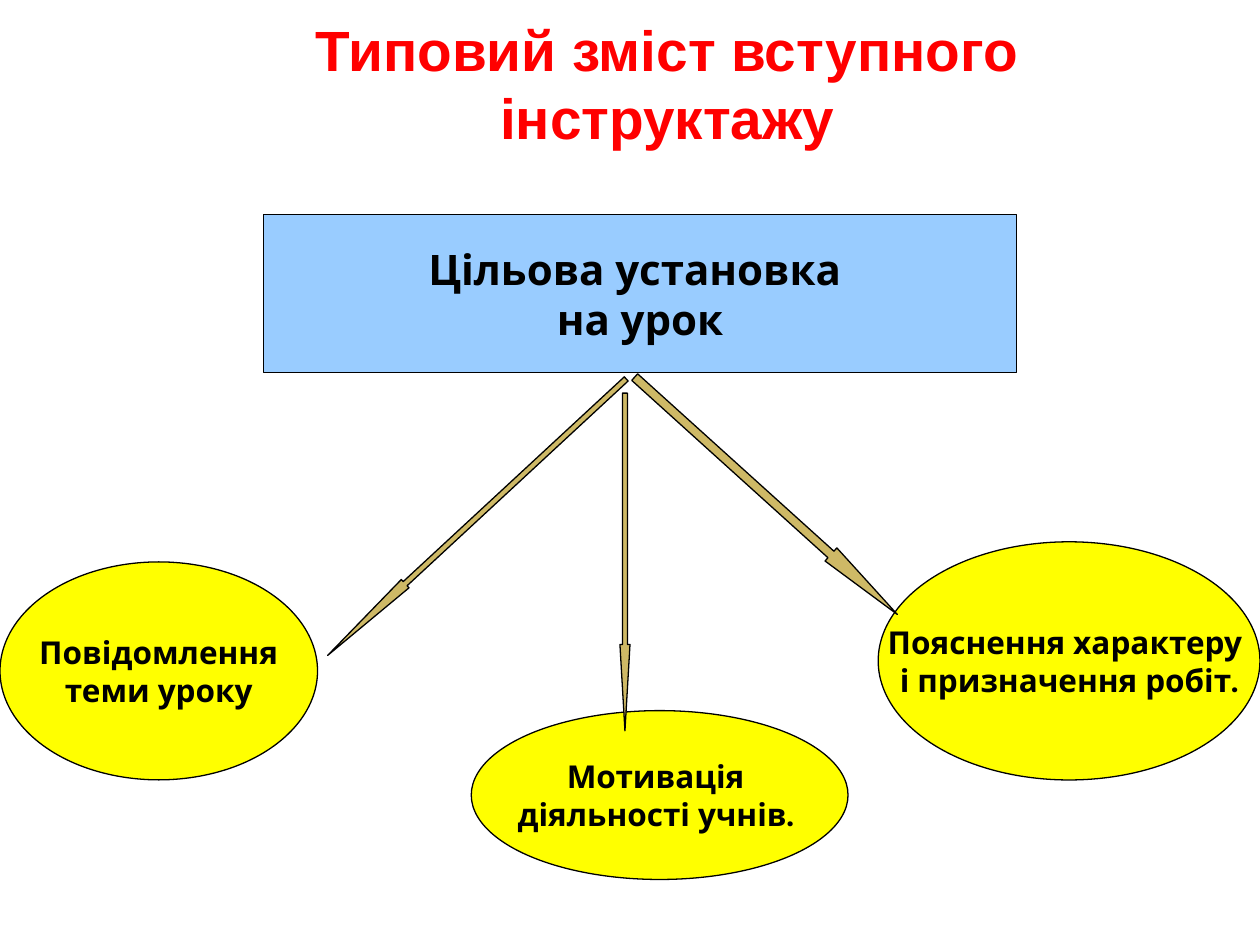
from pptx import Presentation
from pptx.dml.color import RGBColor
from pptx.enum.shapes import MSO_SHAPE
from pptx.enum.text import MSO_ANCHOR, PP_ALIGN
from pptx.util import Inches, Pt

COLORS = {
    "title": "FF0000",
    "text": "000000",
    "outline": "000000",
    "goal": "99CCFF",
    "topic": "FFFF00",
    "arrow": "CEB966",
}


class Diagram:
    """Holds the style and the current slide."""

    title_font = "Arial"
    body_font = "Karla"

    def __init__(self, page):
        self.page = page

    def color(self, name):
        return RGBColor.from_string(COLORS[name])

    def set_text(self, shape, lines, font, size, color, wrap):
        frame = shape.text_frame
        frame.word_wrap = wrap
        frame.vertical_anchor = MSO_ANCHOR.MIDDLE
        frame.text = "\n".join(lines)
        for para in frame.paragraphs:
            para.alignment = PP_ALIGN.CENTER
            para.font.name = font
            para.font.size = Pt(size)
            para.font.bold = True
            para.font.color.rgb = self.color(color)

    def title(self, text, *place):
        box = self.page.shapes.add_textbox(*map(Inches, place))
        self.set_text(box, [text], self.title_font, 32.4, "title", True)

    def shape(self, kind, fill, *place):
        shape = self.page.shapes.add_shape(kind, *map(Inches, place))
        shape.shadow.inherit = False
        shape.fill.solid()
        shape.fill.fore_color.rgb = self.color(fill)
        shape.line.color.rgb = self.color("outline")
        shape.line.width = Pt(0.75)
        return shape

    def goal(self, lines, *place):
        box = self.shape(MSO_SHAPE.RECTANGLE, "goal", *place)
        self.set_text(box, lines, self.body_font, 24, "text", False)

    def topic(self, lines, *place):
        oval = self.shape(MSO_SHAPE.OVAL, "topic", *place)
        self.set_text(oval, lines, self.body_font, 18, "text", False)

    def arrow(self, rotation, head_ratio, *place):
        arrow = self.shape(MSO_SHAPE.DOWN_ARROW, "arrow", *place)
        arrow.adjustments[0] = 0.5
        arrow.adjustments[1] = head_ratio
        arrow.rotation = rotation


def main():
    deck = Presentation()
    deck.slide_width, deck.slide_height = Inches(10), Inches(7.5)
    diagram = Diagram(deck.slides.add_slide(deck.slide_layouts[6]))

    # Title and goal of the lesson
    diagram.title("Типовий зміст вступного інструктажу", 1.17, 0.33, 8.25, 0.66)
    diagram.goal(["Цільова установка ", "на урок"], 2.09, 1.7, 5.98, 1.26)

    # Topics
    diagram.topic(["Повідомлення", "теми уроку"], 0, 4.46, 2.52, 1.73)
    diagram.topic(["Пояснення характеру ", "і призначення робіт."], 6.97, 4.3, 3.03, 1.89)
    diagram.topic(["Мотивація ", "діяльності учнів. "], 3.74, 5.64, 2.99, 1.34)

    # Arrows from the goal to the topics
    diagram.arrow(0, 8.57, 4.92, 3.12, 0.08, 2.68)
    diagram.arrow(47.2, 9.3, 3.74, 2.49, 0.09, 3.23)
    diagram.arrow(312.1, 5.07, 6.01, 2.53, 0.14, 2.81)

    deck.save("out.pptx")


if __name__ == "__main__":
    main()
